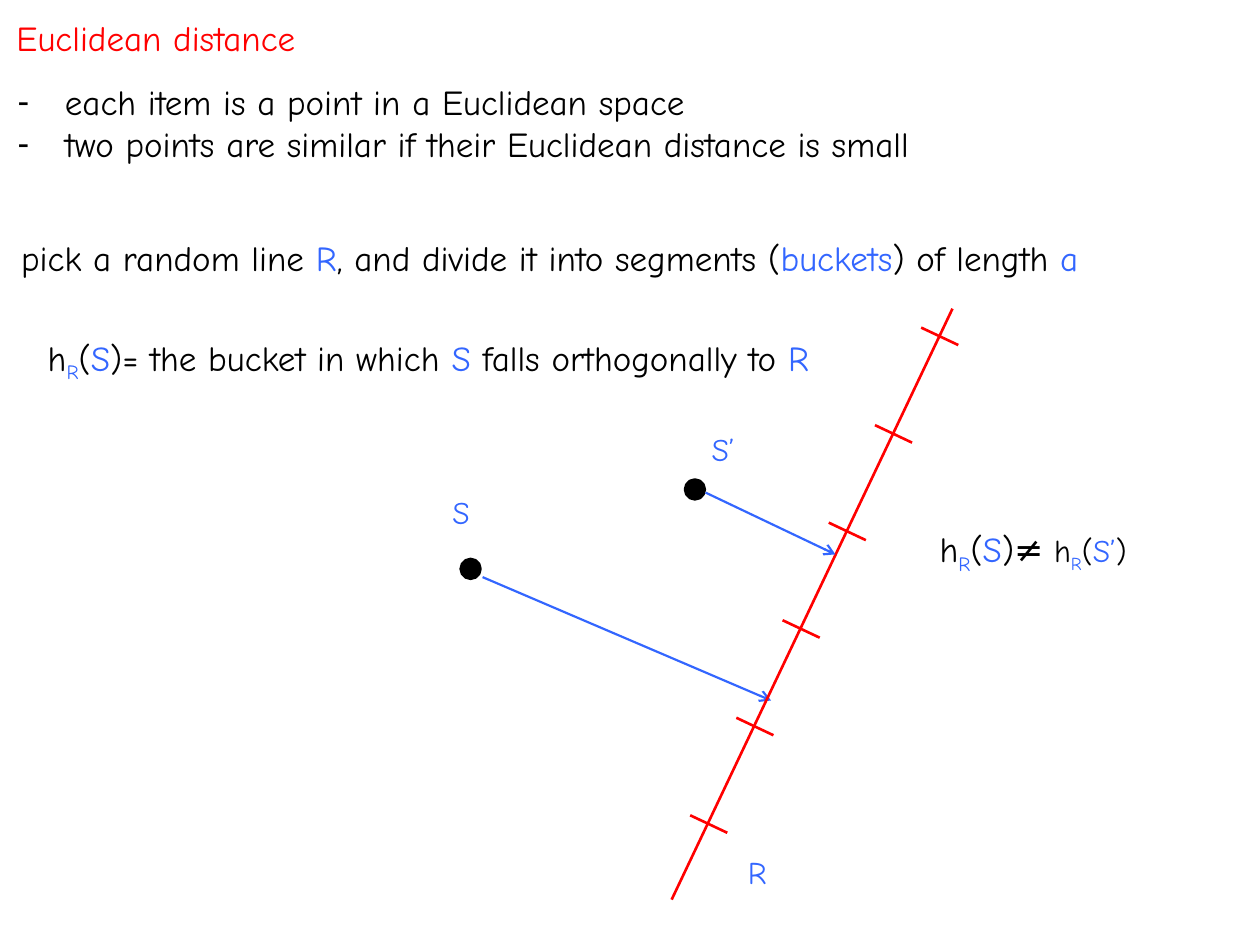
from lxml.etree import SubElement
from pptx import Presentation
from pptx.dml.color import RGBColor
from pptx.enum.shapes import MSO_CONNECTOR, MSO_SHAPE
from pptx.enum.text import MSO_ANCHOR, MSO_AUTO_SIZE, PP_ALIGN
from pptx.oxml.ns import qn
from pptx.util import Pt

COLORS = {"title": "FF0000", "line": "FF0000", "text": "000000", "symbol": "3366FF"}
FONT = "Comic Neue"
SEGMENTS = 5


def color(key):
    return RGBColor.from_string(COLORS[key])


def place(shape, left, top, width, height):
    shape.left, shape.top = Pt(left), Pt(top)
    shape.width, shape.height = Pt(width), Pt(height)


def write(paragraph, text, key="text", size=20, subscript=False, align=PP_ALIGN.LEFT):
    """Append one formatted run to the paragraph."""
    paragraph.alignment = align
    paragraph.space_before = Pt(0)
    run = paragraph.add_run()
    run.text = text
    run.font.name = FONT
    run.font.size = Pt(size)
    run.font.color.rgb = color(key)
    if subscript:
        run.font._element.set("baseline", "-25000")


def prepare_frame(shape):
    frame = shape.text_frame
    frame.word_wrap = True
    frame.auto_size = MSO_AUTO_SIZE.NONE
    frame.vertical_anchor = MSO_ANCHOR.TOP
    return frame


def fill_title(title, text):
    place(title, 2.2, 5.8, 697.7, 31.7)
    write(prepare_frame(title).paragraphs[0], text, key="title")


def fill_list(body, items):
    place(body, 2.9, 42.5, 717.1, 55.4)
    frame = prepare_frame(body)
    for index, item in enumerate(items):
        paragraph = frame.add_paragraph() if index else frame.paragraphs[0]
        write(paragraph, item)
        properties = paragraph._p.get_or_add_pPr()
        properties.set("marL", str(Pt(27)))
        properties.set("indent", str(Pt(-27)))
        SubElement(properties, qn("a:buChar")).set("char", "-")


def add_statement(slide, box, runs, **shared):
    """Add a one-line text box; each run is (text, format)."""
    statement = slide.shapes.add_textbox(*map(Pt, box))
    paragraph = prepare_frame(statement).paragraphs[0]
    for text, run_format in runs:
        write(paragraph, text, **{**shared, **run_format})


def add_label(slide, left, top, text):
    add_statement(slide, (left, top, 38.9, 29), [(text, {})],
                  key="symbol", size=18, align=PP_ALIGN.CENTER)


def add_point(slide, left, top):
    point = slide.shapes.add_shape(MSO_SHAPE.OVAL, Pt(left), Pt(top), Pt(10.8), Pt(10.8))
    point.shadow.inherit = False
    point.fill.solid()
    point.fill.fore_color.rgb = color("text")
    point.line.color.rgb = color("text")
    point.line.width = Pt(2)


def add_line(slide, start, end, key="line", width=1.5, arrow=False):
    line = slide.shapes.add_connector(MSO_CONNECTOR.STRAIGHT, *map(Pt, (*start, *end)))
    line.line.color.rgb = color(key)
    line.line.width = Pt(width)
    if arrow:
        SubElement(line.line._get_or_add_ln(), qn("a:tailEnd")).set("type", "arrow")
    SubElement(line._element.spPr, qn("a:effectLst"))


def add_projection(slide, start, end):
    add_line(slide, start, end, key="symbol", width=1.25, arrow=True)


def add_bucket_marks(slide, first, last):
    """Mark the ends of equal segments between two points of the line."""
    for index in range(SEGMENTS + 1):
        x, y = (a + (b - a) * index / SEGMENTS for a, b in zip(first, last))
        add_line(slide, (x - 10.6, y - 5), (x + 10.6, y + 5))


def main():
    presentation = Presentation()
    presentation.slide_width, presentation.slide_height = Pt(720), Pt(540)
    slide = presentation.slides.add_slide(presentation.slide_layouts[1])

    fill_title(slide.shapes.title, "Euclidean distance")
    fill_list(slide.placeholders[1], [
        "each item is a point in a Euclidean space",
        "two points are similar if their Euclidean distance is small",
    ])

    plain, symbol, small = {}, {"key": "symbol"}, {"size": 18}
    subscript = {**symbol, "subscript": True}
    hash_of_s = [("h", plain), ("R", subscript), ("(", plain), ("S", symbol)]

    add_statement(slide, (5, 131.8, 695.5, 31.7), [
        ("pick a random line ", plain), ("R", symbol),
        (", and divide it into segments (", plain), ("buckets", symbol),
        (") of length ", plain), ("a", symbol),
    ])
    add_statement(slide, (20.2, 188.6, 544.3, 31.7), hash_of_s + [
        (")= the bucket in which ", plain), ("S ", symbol),
        ("falls orthogonally to ", plain), ("R", symbol),
    ])
    add_statement(slide, (526.3, 298.1, 128.2, 31.7), hash_of_s + [
        (")≠", plain), (" h", small), ("R", {**subscript, **small}),
        ("(", small), ("S’", {**symbol, **small}), (")", small),
    ], align=PP_ALIGN.CENTER)

    add_label(slide, 244.1, 277.9, "S")
    add_label(slide, 393.8, 241.9, "S’")
    add_label(slide, 413.3, 483.8, "R")

    add_point(slide, 263.5, 319.7)
    add_point(slide, 391.7, 274.3)
    add_projection(slide, (275.8, 329.8), (440.6, 400.3))
    add_line(slide, (383.8, 514.1), (544.3, 176.4))
    add_bucket_marks(slide, (537, 192.2), (405, 470.9))
    add_projection(slide, (403.2, 281.5), (477.4, 316.8))

    presentation.save("out.pptx")


if __name__ == "__main__":
    main()
